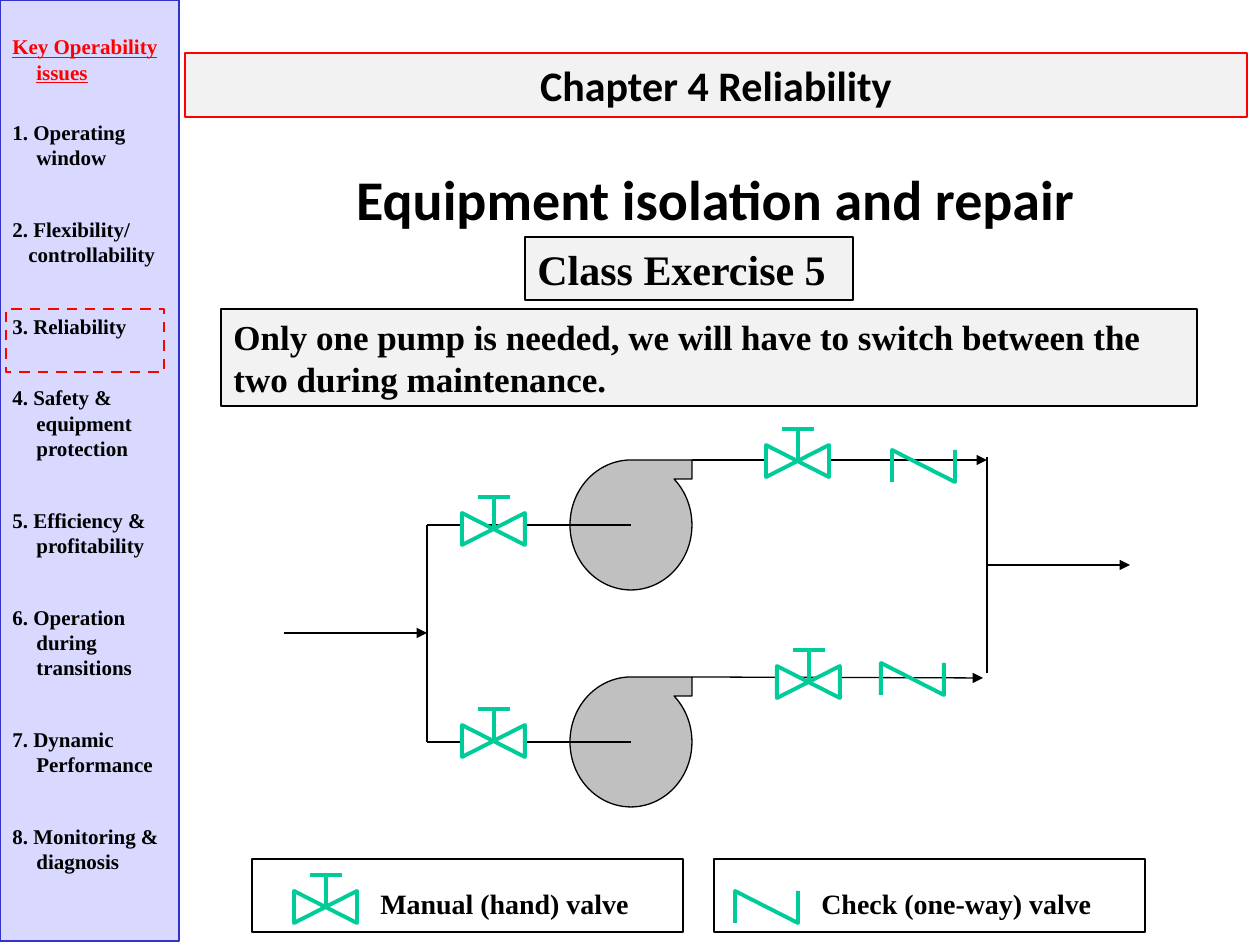
"""Build the equipment isolation slide with its sidebar, pump diagram and legend."""
from dataclasses import dataclass, field
from typing import Optional

from lxml.etree import SubElement
from pptx import Presentation
from pptx.dml.color import RGBColor
from pptx.enum.dml import MSO_LINE
from pptx.enum.shapes import MSO_CONNECTOR, MSO_SHAPE
from pptx.enum.text import MSO_ANCHOR, PP_ALIGN
from pptx.oxml.ns import qn
from pptx.util import Emu, Pt

PX = 914400 / 126
COLORS = {
    "black": "000000", "white": "FFFFFF", "panel": "F2F2F2", "pump": "C0C0C0",
    "valve": "00CC99", "red": "FF0000", "sidebar": "D9D9FF", "edge": "3333CC",
}
SERIF, SANS = "Times New Roman", "Calibri"


@dataclass
class Box:
    at: tuple[int, int, int, int]
    text: str = ""
    size: int = 16
    font: str = SERIF
    align: PP_ALIGN = PP_ALIGN.LEFT
    fill: Optional[str] = None
    line: Optional[str] = None
    weight: float = 0.75
    dash: Optional[MSO_LINE] = None


@dataclass
class Pipe:
    start: tuple[int, int]
    end: tuple[int, int]
    arrow: bool = False
    color: str = "black"
    weight: float = 0.75


@dataclass
class Item:
    text: str
    before: float = 26.6
    margin: int = 24
    indent: int = -24
    format: dict = field(default_factory=dict)


STATEMENT = Box((221, 309, 976, 97), "Only one pump is needed, we will have to switch between the "
                "two during maintenance.", 20, fill="panel", line="black")
SIDEBAR = Box((0, 0, 179, 941), fill="sidebar", line="edge")
HEADINGS = [
    Box((185, 53, 1062, 64), "Chapter 4 Reliability", 24, SANS, PP_ALIGN.CENTER, "panel", "red"),
    Box((311, 158, 809, 81), "Equipment isolation and repair", 32, SANS, PP_ALIGN.CENTER),
    Box((525, 237, 328, 63), "Class Exercise 5", 24, fill="panel", line="black"),
]
HIGHLIGHT = Box((6, 309, 158, 63), line="red", weight=1.5, dash=MSO_LINE.DASH)
LEGEND = [
    Box((368, 880, 410, 47), "Manual (hand) valve"),
    Box((809, 880, 410, 47), "Check (one-way) valve"),
    Box((252, 859, 431, 73), line="black"),
    Box((714, 859, 431, 73), line="black"),
]
PUMPS = [(570, 460), (570, 677)]
PIPES = [
    Pipe((427, 525), (631, 525)),
    Pipe((692, 460), (987, 460), True),
    Pipe((427, 742), (631, 742)),
    Pipe((692, 677), (983, 678), True),
    Pipe((427, 742), (427, 525)),
    Pipe((284, 633), (427, 633), True),
    Pipe((987, 673), (987, 457)),
    Pipe((987, 565), (1130, 565), True),
]
HAND_VALVES = [(462, 513), (462, 725), (777, 666), (766, 445), (294, 891)]
CHECK_VALVES = [(881, 663), (892, 450), (735, 891)]
ISSUES = [
    Item("Key Operability issues", 0, format={"underline": True}),
    Item("1. Operating window", 20),
    Item("2. Flexibility/"),
    Item("controllability", 0, 16, 0),
    Item("3. Reliability"),
    Item("4. Safety & equipment protection"),
    Item("5. Efficiency & profitability"),
    Item("6. Operation during transitions"),
    Item("7. Dynamic Performance"),
    Item("8. Monitoring & diagnosis"),
]


def px(value: float) -> Emu:
    """Turn pixels into EMU."""
    return Emu(round(value * PX))


def rgb(name: str) -> RGBColor:
    """Look up a named colour."""
    return RGBColor.from_string(COLORS[name])


def paint(s, fill: Optional[str], line: Optional[str], weight: float) -> None:
    """Set the fill and outline of a shape."""
    s.shadow.inherit = False
    if fill:
        s.fill.solid()
        s.fill.fore_color.rgb = rgb(fill)
    else:
        s.fill.background()
    if line:
        s.line.color.rgb = rgb(line)
        s.line.width = Pt(weight)
    else:
        s.line.fill.background()


def write(p, text: str, color: str = "black", **values) -> None:
    """Add a bold run with the given font values."""
    r = p.add_run()
    r.text = text
    for name, value in {"bold": True, **values}.items():
        setattr(r.font, name, value)
    r.font.color.rgb = rgb(color)


def draw_box(sp, box: Box):
    """Draw a rectangle or a plain text box."""
    at = map(px, box.at)
    if box.fill or box.line:
        s = sp.add_shape(MSO_SHAPE.RECTANGLE, *at)
        paint(s, box.fill, box.line, box.weight)
        if box.dash:
            s.line.dash_style = box.dash
    else:
        s = sp.add_textbox(*at)
    if box.text:
        tf = s.text_frame
        tf.word_wrap = True
        tf.vertical_anchor = MSO_ANCHOR.MIDDLE
        p = tf.paragraphs[0]
        p.alignment = box.align
        write(p, box.text, size=Pt(box.size), name=box.font)
    return s


def draw_sidebar(sp, box: Box, items: list[Item]) -> None:
    """Draw the list of operability issues."""
    tf = draw_box(sp, box).text_frame
    tf.word_wrap = True
    tf.vertical_anchor = MSO_ANCHOR.TOP
    tf.margin_top = px(34)
    for i, item in enumerate(items):
        p = tf.add_paragraph() if i else tf.paragraphs[0]
        values = {"alignment": PP_ALIGN.LEFT, "line_spacing": Pt(14.4), "space_before": Pt(item.before)}
        for name, value in values.items():
            setattr(p, name, value)
        props = p._p.get_or_add_pPr()
        props.set("marL", str(px(item.margin)))
        props.set("indent", str(px(item.indent)))
        color = "black" if i else "red"
        write(p, item.text, color, size=Pt(12), name=SERIF, **item.format)


def draw_pipe(sp, pipe: Pipe) -> None:
    """Draw a straight line with an optional arrowhead."""
    s = sp.add_connector(MSO_CONNECTOR.STRAIGHT, *map(px, pipe.start + pipe.end))
    s.line.color.rgb = rgb(pipe.color)
    s.line.width = Pt(pipe.weight)
    if pipe.arrow:
        SubElement(s.line._get_or_add_ln(), qn("a:tailEnd"), type="triangle")
    SubElement(s._element.spPr, qn("a:effectLst"))


def draw_pump(sp, x: int, y: int) -> None:
    """Draw a pump with its outlet at the top right."""
    s = sp.add_shape(MSO_SHAPE.FLOWCHART_SEQUENTIAL_ACCESS_STORAGE, *map(px, (x, y, 122, 130)))
    s._element.spPr.xfrm.set("flipV", "1")
    paint(s, "pump", "black", 0.75)


def draw_outline(sp, x: int, y: int, points: list, fill: Optional[str] = None) -> None:
    """Draw a valve outline, closed when it has a fill."""
    spots = [(x + dx, y + dy) for dx, dy in points]
    builder = sp.build_freeform(*spots[0], scale=PX)
    builder.add_line_segments(spots[1:], close=bool(fill))
    paint(builder.convert_to_shape(), fill, "valve", 2.25)


def draw_hand_valve(sp, x: int, y: int) -> None:
    """Draw a bow tie with a stem and a handle."""
    draw_outline(sp, x, y, [(0, 0), (63, 32), (63, 0), (0, 32)], "white")
    draw_pipe(sp, Pipe((x + 32, y + 16), (x + 32, y - 16), color="valve", weight=2.25))
    draw_pipe(sp, Pipe((x + 16, y - 16), (x + 48, y - 16), color="valve", weight=2.25))


def main() -> None:
    """Build and save the slide."""
    prs = Presentation()
    prs.slide_width, prs.slide_height = px(1260), px(945)
    sp = prs.slides.add_slide(prs.slide_layouts[6]).shapes
    draw_box(sp, STATEMENT)
    for spot in PUMPS:
        draw_pump(sp, *spot)
    for pipe in PIPES:
        draw_pipe(sp, pipe)
    for spot in HAND_VALVES:
        draw_hand_valve(sp, *spot)
    for spot in CHECK_VALVES:
        draw_outline(sp, *spot, [(0, 32), (0, 0), (63, 32), (63, 0)])
    for box in LEGEND:
        draw_box(sp, box)
    draw_sidebar(sp, SIDEBAR, ISSUES)
    for box in [HIGHLIGHT, *HEADINGS]:
        draw_box(sp, box)
    prs.save("out.pptx")


if __name__ == "__main__":
    main()
